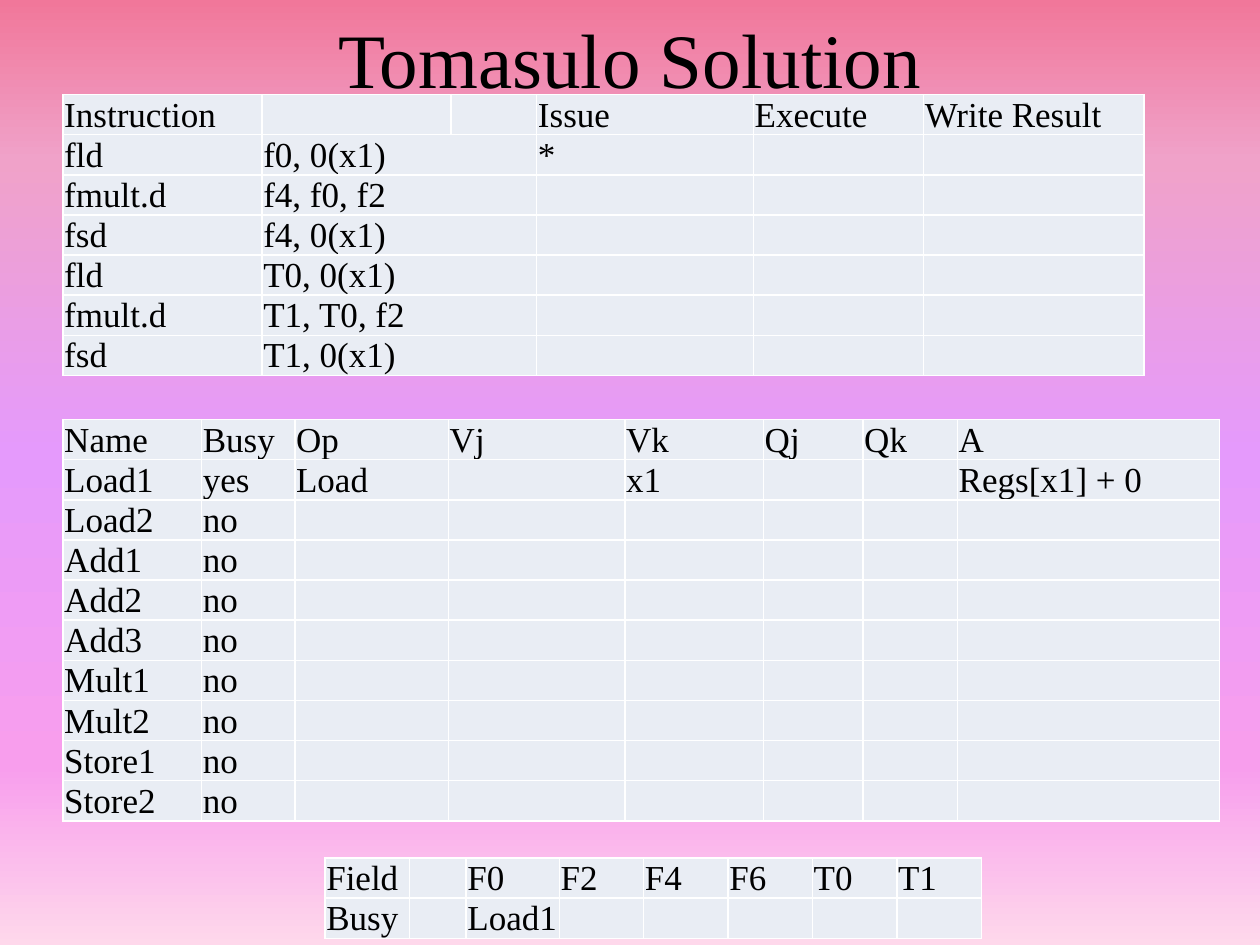
from copy import deepcopy

from pptx import Presentation
from pptx.dml.color import RGBColor
from pptx.enum.text import MSO_ANCHOR, PP_ALIGN
from pptx.oxml.ns import qn
from pptx.util import Inches, Pt

BOTTOM, MIDDLE = MSO_ANCHOR.BOTTOM, MSO_ANCHOR.MIDDLE
CENTER = PP_ALIGN.CENTER
BLACK = RGBColor(0x00, 0x00, 0x00)
CELL_FILL = RGBColor(0xE9, 0xED, 0xF4)
GRADIENT = [
    (0, RGBColor(0xF1, 0x77, 0x9A)),
    (0.17, RGBColor(0xF0, 0xA2, 0xC9)),
    (0.48, RGBColor(0xE5, 0x9A, 0xFC)),
    (0.81, RGBColor(0xF8, 0x9E, 0xED)),
    (1, RGBColor(0xFE, 0xD8, 0xEB)),
]
CELL_FORMAT = {
    "vertical_anchor": BOTTOM,
    "margin_left": Inches(0.01),
    "margin_right": Inches(0.01),
    "margin_top": Inches(0.01),
    "margin_bottom": 0,
}
INSTRUCTIONS = [
    ["Instruction", "", "", "Issue", "Execute", "Write Result"],
    ["fld", "f0, 0(x1)", "", "*"],
    ["fmult.d", "f4, f0, f2"],
    ["fsd", "f4, 0(x1)"],
    ["fld", "T0, 0(x1)"],
    ["fmult.d", "T1, T0, f2"],
    ["fsd", "T1, 0(x1)"],
]
IDLE_STATIONS = ["Load2", "Add1", "Add2", "Add3", "Mult1", "Mult2", "Store1", "Store2"]
STATIONS = [
    ["Name", "Busy", "Op", "Vj", "Vk", "Qj", "Qk", "A"],
    ["Load1", "yes", "Load", "", "x1", "", "", "Regs[x1] + 0"],
] + [[name, "no"] for name in IDLE_STATIONS]
REGISTERS = [
    ["Field", "", "F0", "F2", "F4", "F6", "T0", "T1"],
    ["Busy", "", "Load1"],
]


class SlideBuilder:
    """Hold the text style and the current slide, and add its elements."""

    def __init__(self, slide, font_name="Times New Roman"):
        self.slide = slide
        self.font_name = font_name

    def style_font(self, font, size):
        for name, value in {"name": self.font_name, "size": Pt(size)}.items():
            setattr(font, name, value)
        font.color.rgb = BLACK

    def background(self, stops):
        fill = self.slide.background.fill
        fill.gradient()
        fill.gradient_angle = 270
        stop_list = next(self.slide.element.iter(qn("a:gsLst")))
        while len(stop_list) < len(stops):
            stop_list.append(deepcopy(stop_list[0]))
        for stop, (position, color) in zip(fill.gradient_stops, stops):
            stop.position = position
            stop.color.rgb = color

    def title(self, text, left, top, width, height):
        shape = self.slide.shapes.title
        box = {"left": left, "top": top, "width": width, "height": height}
        for name, value in box.items():
            setattr(shape, name, Inches(value))
        shape.text_frame.text = text
        shape.text_frame.vertical_anchor = MIDDLE
        paragraph = shape.text_frame.paragraphs[0]
        paragraph.alignment = CENTER
        self.style_font(paragraph.runs[0].font, 44)

    def table(self, rows, left, top, height, widths, row_height=0.1):
        shape = self.slide.shapes.add_table(
            len(rows), len(widths), Inches(left), Inches(top),
            Inches(sum(widths)), Inches(height))
        table = shape.table
        table.first_row = table.horz_banding = False
        for column, width in zip(table.columns, widths):
            column.width = Inches(width)
        for row in table.rows:
            row.height = Inches(row_height)
        shape.height = Inches(height)
        for cell in table.iter_cells():
            for name, value in CELL_FORMAT.items():
                setattr(cell, name, value)
            cell.fill.solid()
            cell.fill.fore_color.rgb = CELL_FILL
        for row_index, texts in enumerate(rows):
            for column_index, text in enumerate(texts):
                if text:
                    paragraph = table.cell(row_index, column_index).text_frame.paragraphs[0]
                    run = paragraph.add_run()
                    run.text = text
                    self.style_font(run.font, 20)
        return table


def main():
    presentation = Presentation()
    presentation.slide_width = Inches(10)
    presentation.slide_height = Inches(7.5)
    slide = presentation.slides.add_slide(presentation.slide_layouts[5])
    builder = SlideBuilder(slide)
    builder.background(GRADIENT)
    builder.title("Tomasulo Solution", 0.5, -0.17, 9, 1.25)
    instructions = builder.table(
        INSTRUCTIONS, 0.5, 0.75, 2.41, [1.58, 1.5, 0.68, 1.72, 1.35, 1.75])
    for row_index in range(1, len(INSTRUCTIONS)):
        instructions.cell(row_index, 1).merge(instructions.cell(row_index, 2))
    builder.table(
        STATIONS, 0.5, 3.33, 3.44, [1.1, 0.74, 1.22, 1.4, 1.1, 0.79, 0.75, 2.08])
    builder.table(
        REGISTERS, 2.58, 6.81, 0.69, [0.67, 0.45, 0.74] + [0.67] * 5, row_height=0.18)
    presentation.save("out.pptx")


if __name__ == "__main__":
    main()
